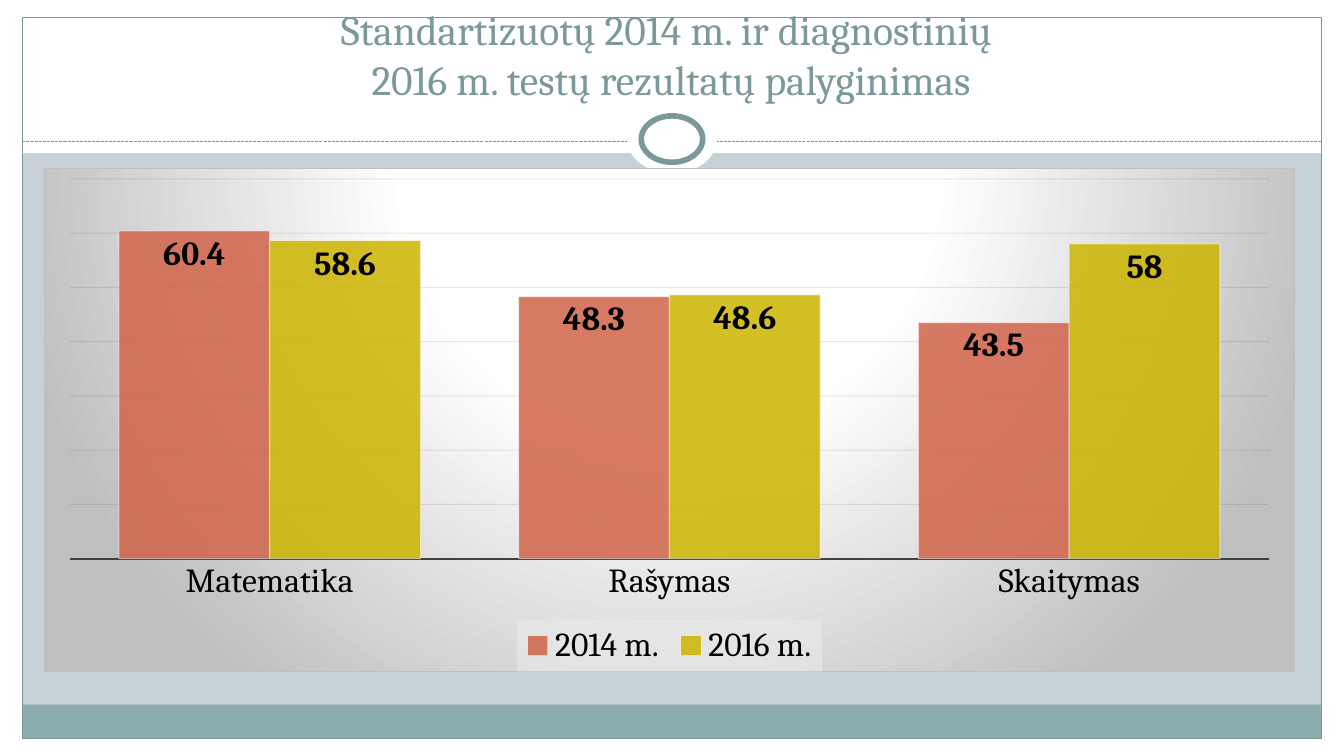
from lxml import etree
from pptx import Presentation
from pptx.chart.data import CategoryChartData
from pptx.dml.color import RGBColor
from pptx.enum import chart as ch, dml, shapes, text
from pptx.oxml import parse_xml
from pptx.oxml.ns import qn
from pptx.util import Inches, Pt

FONT = "Cambria"
TITLE = "Standartizuotų 2014 m. ir diagnostinių \v2016 m. testų rezultatų palyginimas"
SUBJECTS = ["Matematika", "Rašymas", "Skaitymas"]
RESULTS = [
    ("2014 m.", [60.4, 48.3, 43.5], "D16349"),
    ("2016 m.", [58.6, 48.6, 58], "CCB400"),
]
WIDTH, HEIGHT = 13.33, 7.5
SIDE, EDGE = 0.22, 0.17
INNER = WIDTH - 2 * SIDE
TEAL, BAND, WHITE, BLACK = "7C999A", "8CADAE", "FFFFFF", "000000"
RECT, OVAL = shapes.MSO_SHAPE.RECTANGLE, shapes.MSO_SHAPE.OVAL
# preset, left, top, width, height, fill, line width
FRAME = [
    (RECT, 0, HEIGHT - EDGE, WIDTH, EDGE, WHITE, 0),
    (RECT, 0, 0, WIDTH, 1.52, WHITE, 0),
    (RECT, 0, 0, SIDE, HEIGHT, WHITE, 0),
    (RECT, WIDTH - SIDE, 0, SIDE, HEIGHT, WHITE, 0),
    (RECT, SIDE, 6.99, INNER, 0.34, BAND, 0),
    (RECT, SIDE, EDGE, INNER, HEIGHT - 2 * EDGE, None, 0.75),
]
RINGS = [
    (OVAL, 6.22, 1.05, 0.89, 0.67, WHITE, 0),
    (OVAL, 6.36, 1.15, 0.61, 0.46, WHITE, 4),
]
PLOT = {"x": 0.02, "y": 0.02, "w": 0.96, "h": 0.755}
NS = ('xmlns:a="http://schemas.openxmlformats.org/drawingml/2006/main" '
      'xmlns:c="http://schemas.openxmlformats.org/drawingml/2006/chart"')
CHART_AREA = f"""<c:spPr {NS}>
  <a:gradFill><a:gsLst>
    <a:gs pos="0"><a:srgbClr val="FFFFFF"/></a:gs>
    <a:gs pos="39000"><a:srgbClr val="FFFFFF"/></a:gs>
    <a:gs pos="100000"><a:srgbClr val="BFBFBF"/></a:gs>
  </a:gsLst><a:path path="circle">
    <a:fillToRect l="50000" t="-80000" r="50000" b="180000"/>
  </a:path></a:gradFill>
  <a:ln w="9525"><a:solidFill><a:srgbClr val="BFBFBF"/></a:solidFill></a:ln>
</c:spPr>"""
LEGEND_AREA = f"""<c:spPr {NS}><a:solidFill><a:srgbClr val="F2F2F2">
  <a:alpha val="39000"/></a:srgbClr></a:solidFill></c:spPr>"""


def paint(fill, color, opacity=100):
    fill.solid()
    fill.fore_color.rgb = RGBColor.from_string(color)
    if opacity < 100:
        srgb = fill._xPr.find(qn("a:solidFill"))[0]
        etree.SubElement(srgb, qn("a:alpha")).set("val", str(opacity * 1000))


def stroke(line, color, width, opacity=100):
    paint(line.fill, color, opacity)
    line.width = Pt(width)


def style(font, size, color=BLACK, bold=False):
    font.name, font.size, font.bold = FONT, Pt(size), bold
    font.color.rgb = RGBColor.from_string(color)


def add_parts(slide, parts):
    for preset, left, top, width, height, fill, line in parts:
        part = slide.shapes.add_shape(
            preset, Inches(left), Inches(top), Inches(width), Inches(height))
        part.shadow.inherit = False
        if fill:
            paint(part.fill, fill)
        else:
            part.fill.background()
        if line:
            stroke(part.line, TEAL, line)
        else:
            part.line.fill.background()


def add_divider(slide):
    divider = slide.shapes.add_connector(
        shapes.MSO_CONNECTOR.STRAIGHT, Inches(SIDE), Inches(1.4),
        Inches(SIDE + INNER), Inches(1.4))
    stroke(divider.line, TEAL, 0.75)
    divider.line.dash_style = dml.MSO_LINE.SQUARE_DOT
    etree.SubElement(divider.element.spPr, qn("a:effectLst"))


def place_title(slide):
    title = slide.shapes.title
    title.left, title.top = Inches(0.44), Inches(0.25)
    title.width, title.height = Inches(12.44), Inches(0.83)
    frame = title.text_frame
    frame.text = TITLE
    frame.word_wrap = True
    frame.auto_size = text.MSO_AUTO_SIZE.NONE
    frame.vertical_anchor = text.MSO_ANCHOR.BOTTOM
    paragraph = frame.paragraphs[0]
    paragraph.alignment = text.PP_ALIGN.CENTER
    style(paragraph.font, 29.7, TEAL)
    title.element.getparent().append(title.element)  # in front of the frame


def fix_plot_area(chart):
    """Give the inner plot area its place as fractions of the chart."""
    plot_area = chart.element.chart.plotArea
    for old in plot_area.findall(qn("c:layout")):
        plot_area.remove(old)
    layout = etree.Element(qn("c:layout"))
    manual = etree.SubElement(layout, qn("c:manualLayout"))
    settings = {"layoutTarget": "inner", "xMode": "edge", "yMode": "edge", **PLOT}
    for key, value in settings.items():
        etree.SubElement(manual, qn(f"c:{key}")).set("val", str(value))
    plot_area.insert(0, layout)


def add_results(slide):
    data = CategoryChartData()
    data.categories = SUBJECTS
    for name, values, _ in RESULTS:
        data.add_series(name, values)
    chart = slide.shapes.add_chart(
        ch.XL_CHART_TYPE.COLUMN_CLUSTERED, Inches(0.44), Inches(1.67),
        Inches(12.4), Inches(5), data).chart
    style(chart.font, 10)
    chart.has_title = False
    chart.element.chart.addnext(parse_xml(CHART_AREA))
    fix_plot_area(chart)

    subjects = chart.category_axis
    subjects.major_tick_mark = ch.XL_TICK_MARK.NONE
    style(subjects.tick_labels.font, 24)
    stroke(subjects.format.line, "404040", 1.5)
    scores = chart.value_axis
    scores.minimum_scale, scores.maximum_scale, scores.major_unit = 0, 70, 10
    scores.visible = False
    stroke(scores.major_gridlines.format.line, "0D0D0D", 0.75, 10)

    plot = chart.plots[0]
    plot.gap_width, plot.overlap, plot.vary_by_categories = 65, 0, False
    for series, (_, _, color) in zip(plot.series, RESULTS):
        paint(series.format.fill, color, 85)
        stroke(series.format.line, WHITE, 0.75, 50)
        labels = series.data_labels
        labels.show_value = True
        labels.position = ch.XL_LABEL_POSITION.INSIDE_END
        style(labels.font, 24, bold=True)

    chart.has_legend = True
    legend = chart.legend
    legend.position = ch.XL_LEGEND_POSITION.BOTTOM
    legend.include_in_layout = False
    style(legend.font, 24)
    legend.font._element.getparent().getparent().getparent().addprevious(
        parse_xml(LEGEND_AREA))


def main():
    deck = Presentation()
    deck.slide_width, deck.slide_height = Inches(WIDTH), Inches(HEIGHT)
    slide = deck.slides.add_slide(deck.slide_layouts[5])
    paint(slide.background.fill, "C5D1D7")
    add_parts(slide, FRAME)
    add_divider(slide)
    add_parts(slide, RINGS)
    place_title(slide)
    add_results(slide)
    deck.save("out.pptx")


if __name__ == "__main__":
    main()
